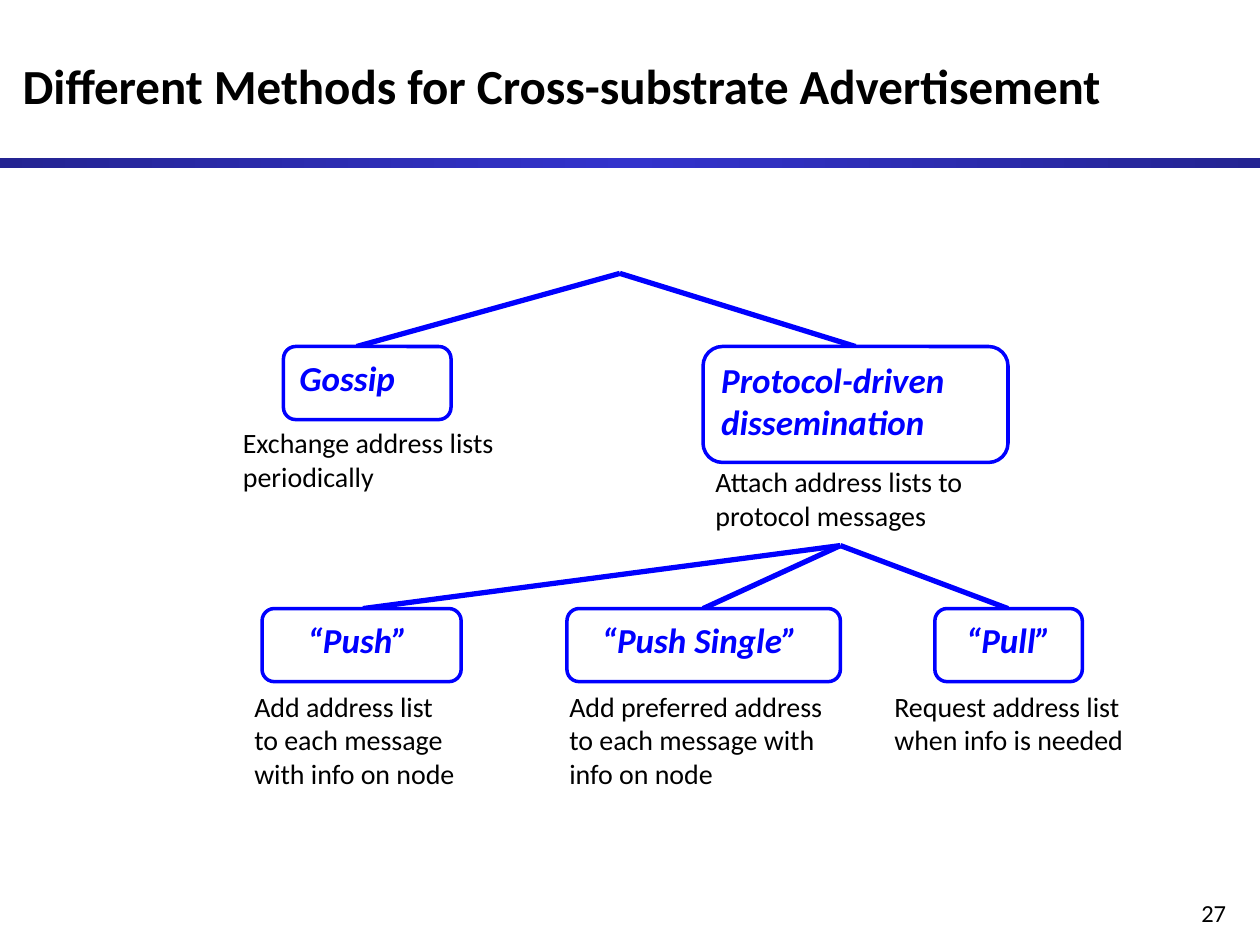
import copy

import lxml.etree
import pptx
import pptx.dml.color
import pptx.enum.shapes
import pptx.enum.text
import pptx.oxml.ns
import pptx.util

Inches = pptx.util.Inches
Shapes = pptx.enum.shapes.MSO_SHAPE
Align = pptx.enum.text.PP_ALIGN
AutoSize = pptx.enum.text.MSO_AUTO_SIZE
Anchor = pptx.enum.text.MSO_ANCHOR

BLACK, BLUE, WHITE = "000000", "0000FF", "FFFFFF"
TITLE = {"size": 28, "bold": True}
CAPTION = {"size": 16}
NODE = {"size": 20, "bold": True, "italic": True}
PAGE_NUMBER = {"size": 14}

UPPER_TOP, LOWER_TOP, CAPTION_TOP = 2.75, 4.83, 5.42
NODE_HEIGHT = 0.58

# label, left, top, width, height, alignment
NODES = [
    ("“Push” ", 2.08, LOWER_TOP, 1.58, NODE_HEIGHT, Align.CENTER),
    ("“Pull”", 7.42, LOWER_TOP, 1.17, NODE_HEIGHT, Align.CENTER),
    ("“Push Single” ", 4.5, LOWER_TOP, 2.17, NODE_HEIGHT, Align.CENTER),
    ("Gossip", 2.25, UPPER_TOP, 1.33, NODE_HEIGHT, Align.LEFT),
    ("Protocol-driven dissemination", 5.58, UPPER_TOP, 2.42, 0.92, Align.LEFT),
]
# text, left, top, width, height
CAPTIONS = [
    ("Exchange address lists periodically", 1.83, 3.33, 2.5, 0.64),
    ("Attach address lists to protocol messages", 5.58, 3.64, 2.42, 0.64),
    ("Add address list \vto each message \vwith info on node",
     1.92, CAPTION_TOP, 2, 0.91),
    ("Request address list when info is needed", 7, CAPTION_TOP, 2.33, 0.64),
    ("Add preferred address \vto each message with \vinfo on node",
     4.42, CAPTION_TOP, 2.42, 0.91),
]
# parent point, top of the children, horizontal places of the children
BRANCHES = [
    ((4.92, 2.17), UPPER_TOP, (2.83, 6.79)),
    ((6.67, 4.33), LOWER_TOP, (8, 5.58, 2.88)),
]


def color(value):
    return pptx.dml.color.RGBColor.from_string(value)


def write(shape, text, style, ink=BLACK, align=Align.LEFT, anchor=Anchor.TOP):
    frame = shape.text_frame
    frame.word_wrap = True
    frame.vertical_anchor = anchor
    para = frame.paragraphs[0]
    para.text = text
    para.alignment = align
    values = {"name": "Calibri", **style, "size": pptx.util.Pt(style["size"])}
    for span in para.runs:
        for name, value in values.items():
            setattr(span.font, name, value)
        span.font.color.rgb = color(ink)


def add_text(page, text, place, style, **options):
    box = page.shapes.add_textbox(*map(Inches, place))
    write(box, text, style, **options)
    return box


def add_node(page, label, place, align):
    node = page.shapes.add_shape(Shapes.ROUNDED_RECTANGLE, *map(Inches, place))
    node.shadow.inherit = False
    node.fill.solid()
    node.fill.fore_color.rgb = color(WHITE)
    node.line.color.rgb = color(BLUE)
    node.line.width = pptx.util.Pt(2)
    write(node, label, NODE, ink=BLUE, align=align)


def add_branch(page, start, end):
    line = page.shapes.add_connector(
        pptx.enum.shapes.MSO_CONNECTOR.STRAIGHT, *map(Inches, start + end))
    line.line.color.rgb = color(BLUE)
    line.line.width = pptx.util.Pt(3)
    # An empty effect list removes the shadow
    lxml.etree.SubElement(line.element.spPr, pptx.oxml.ns.qn("a:effectLst"))


def add_gradient_bar(page, place, hues):
    bar = page.shapes.add_shape(Shapes.RECTANGLE, *map(Inches, place))
    bar.shadow.inherit = False
    bar.line.fill.background()
    bar.fill.gradient()
    bar.fill.gradient_angle = 0
    # The preset gradient has two stops; a third is added for the far end
    stop_list = bar.element.spPr.find(".//" + pptx.oxml.ns.qn("a:gsLst"))
    stop_list.append(copy.deepcopy(stop_list[-1]))
    for index, (stop, hue) in enumerate(zip(bar.fill.gradient_stops, hues)):
        stop.position = index / (len(hues) - 1)
        stop.color.rgb = color(hue)


def set_title(page, text, place):
    title = page.shapes.title
    for name, value in zip(("left", "top", "width", "height"), place):
        setattr(title, name, Inches(value))
    write(title, text, TITLE, anchor=Anchor.MIDDLE)
    title.text_frame.auto_size = AutoSize.NONE


def main():
    deck = pptx.Presentation()
    deck.slide_width, deck.slide_height = Inches(10), Inches(7.5)
    page = deck.slides.add_slide(deck.slide_layouts.get_by_name("Title Only"))

    # Heading, rule and page number
    add_gradient_bar(page, (0, 1.25, 10, 0.08), ("242492", "3333CC", "242492"))
    set_title(page, "Different Methods for Cross-substrate Advertisement",
              (0.08, 0.17, 9.83, 1))
    add_text(page, "27", (7.75, 7.08, 2.08, 0.25), PAGE_NUMBER,
             align=Align.RIGHT)

    # Explanations under the nodes
    for text, *place in CAPTIONS:
        box = add_text(page, text, place, CAPTION)
        box.text_frame.auto_size = AutoSize.SHAPE_TO_FIT_TEXT

    # Tree: branches behind, nodes in front
    for parent, child_top, children in BRANCHES:
        for child in children:
            add_branch(page, parent, (child, child_top))
    for label, *place, align in NODES:
        add_node(page, label, place, align)

    deck.save("out.pptx")


if __name__ == "__main__":
    main()
